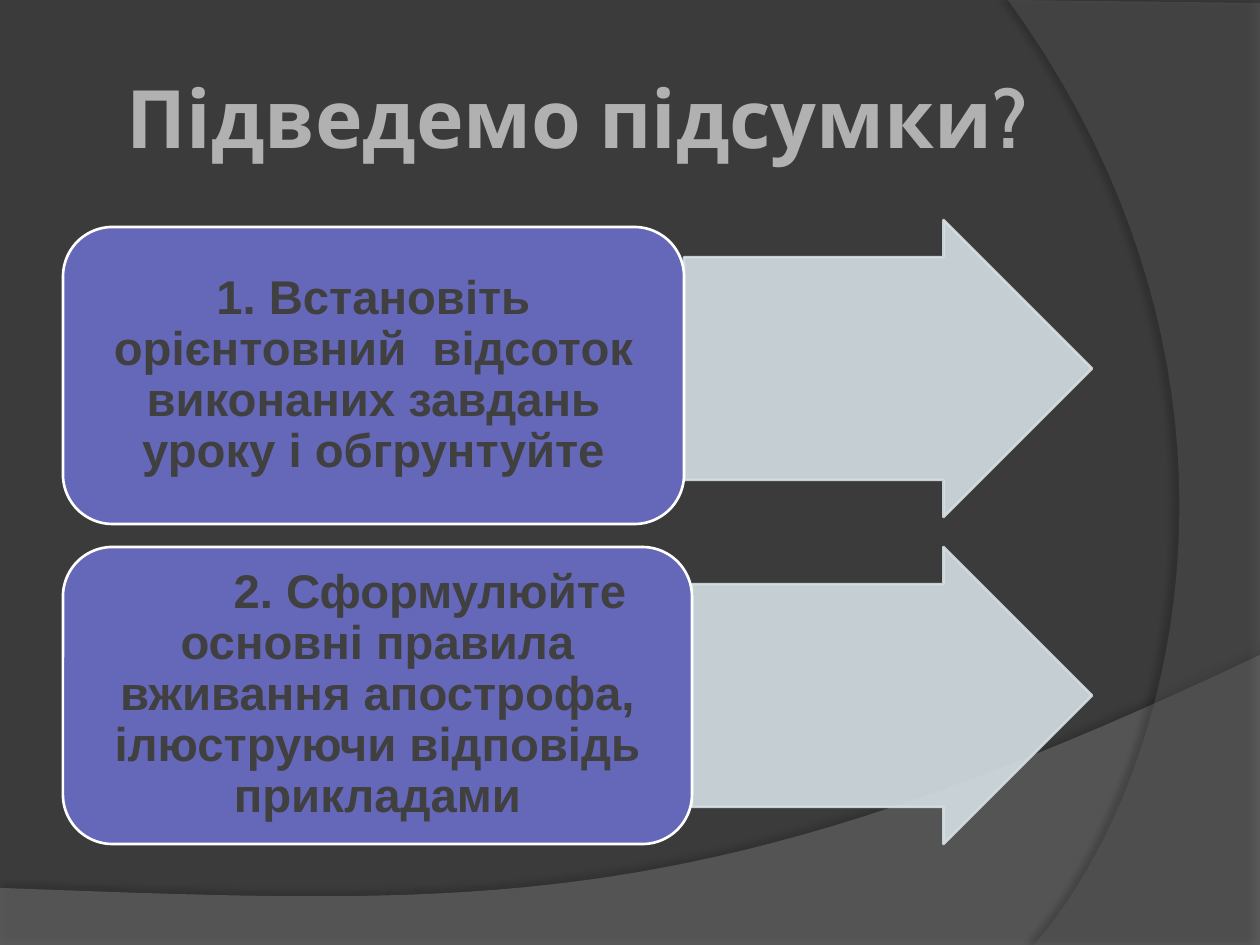
import pptx
import pptx.dml.color
import pptx.enum.shapes
import pptx.enum.text
import pptx.oxml
import pptx.oxml.ns
import pptx.util

RGBColor = pptx.dml.color.RGBColor
MSO_SHAPE = pptx.enum.shapes.MSO_SHAPE
PP_ALIGN = pptx.enum.text.PP_ALIGN
MSO_ANCHOR = pptx.enum.text.MSO_ANCHOR
qn = pptx.oxml.ns.qn

PX = 914400 / 126
CURVE_STEPS = 40
BACKGROUND = RGBColor(0x3B, 0x3B, 0x3B)
BOTTOM_WAVE = RGBColor(0x7F, 0x7F, 0x7F)
SIDE_WAVE = RGBColor(0x5E, 0x5E, 0x5E)
TITLE_GREY = RGBColor(0xB1, 0xB1, 0xB1)
ARROW = RGBColor(0xD5, 0xDF, 0xE4)
BOX = RGBColor(0x65, 0x67, 0xB9)
WHITE = RGBColor(0xFF, 0xFF, 0xFF)
TEXT = RGBColor(0x40, 0x40, 0x40)


def px(length):
    return pptx.util.Emu(round(length * PX))


def set_opacity(shape, percent):
    """Make every solid colour of the shape's fill and line translucent."""
    for color in shape._element.spPr.iter(qn("a:srgbClr")):
        alpha = color.makeelement(qn("a:alpha"), {"val": str(percent * 1000)})
        color.append(alpha)


presentation = pptx.Presentation()
presentation.slide_width = px(1260)
presentation.slide_height = px(945)
slide = presentation.slides.add_slide(presentation.slide_layouts[5])
slide.background.fill.solid()
slide.background.fill.fore_color.rgb = BACKGROUND

# Background waves: straight corners, then one cubic curve from the last corner.
# corners, curve (two controls and end), colour, opacity, shadow opacity, distance, angle
waves = [
    ([(0, 888), (0, 945), (1260, 945), (1260, 655)],
     [(704, 919), (493, 906), (0, 888)], BOTTOM_WAVE, 45, 35, 3.5, 270),
    ([(1260, 3), (1260, 945), (1034, 945)],
     [(1178, 780), (1283, 378), (1008, 0)], SIDE_WAVE, 40, 45, 4, 180),
]
for corners, curve, color, opacity, shadow_opacity, distance, angle in waves:
    points = list(corners)
    controls = [corners[-1]] + curve
    for step in range(1, CURVE_STEPS + 1):
        t = step / CURVE_STEPS
        weights = [(1 - t) ** 3, 3 * t * (1 - t) ** 2, 3 * t ** 2 * (1 - t), t ** 3]
        points.append(tuple(sum(weight * control[axis] for weight, control in zip(weights, controls))
                            for axis in (0, 1)))
    points = [(px(x), px(y)) for x, y in points]
    builder = slide.shapes.build_freeform(*points[0], scale=1)
    builder.add_line_segments(points[1:], close=True)
    wave = builder.convert_to_shape()
    wave.fill.solid()
    wave.fill.fore_color.rgb = color
    wave.line.fill.background()
    set_opacity(wave, opacity)
    wave._element.spPr.append(pptx.oxml.parse_xml(
        '<a:effectLst xmlns:a="http://schemas.openxmlformats.org/drawingml/2006/main">'
        f'<a:outerShdw blurRad="{pptx.util.Pt(4)}" dist="{pptx.util.Pt(distance)}" '
        f'dir="{angle * 60000}" algn="ctr" rotWithShape="0"><a:srgbClr val="000000">'
        f'<a:alpha val="{shadow_opacity * 1000}"/></a:srgbClr></a:outerShdw></a:effectLst>'))

title = slide.shapes.title
slide.shapes._spTree.append(title._element)  # in front of the waves
title.left, title.top, title.width, title.height = px(63), px(38), px(1029), px(157)
frame = title.text_frame
frame.word_wrap = True
frame.vertical_anchor = MSO_ANCHOR.MIDDLE
frame.margin_left = frame.margin_right = frame.margin_top = frame.margin_bottom = px(6)
paragraph = frame.paragraphs[0]
paragraph.alignment = PP_ALIGN.CENTER
run = paragraph.add_run()
run.text = "Підведемо підсумки?"
run.font.name = "Cabin"
run.font.size = pptx.util.Pt(46)
run.font.bold = True
run.font.color.rgb = TITLE_GREY

# Tasks: arrow top, box top, box width, first-line indent, text
ROW_HEIGHT = 297
BOX_LEFT = 63
ARROW_TIP = 1092
tasks = [
    (220, 227, 621, 0,
     "1. Встановіть орієнтовний  відсоток виконаних завдань уроку і обгрунтуйте"),
    (547, 547, 629, 105,
     "2. Сформулюйте основні правила вживання апострофа, ілюструючи відповідь прикладами"),
]
for arrow_top, box_top, box_width, indent, text in tasks:
    arrow_left = BOX_LEFT + box_width
    arrow = slide.shapes.add_shape(MSO_SHAPE.RIGHT_ARROW, px(arrow_left), px(arrow_top),
                                   px(ARROW_TIP - arrow_left), px(ROW_HEIGHT))
    arrow.adjustments[0] = 0.75
    arrow.adjustments[1] = 0.5
    box = slide.shapes.add_shape(MSO_SHAPE.ROUNDED_RECTANGLE, px(BOX_LEFT), px(box_top),
                                 px(box_width), px(ROW_HEIGHT))
    for shape, fill, line in ((arrow, ARROW, ARROW), (box, BOX, WHITE)):
        shape.shadow.inherit = False
        shape.fill.solid()
        shape.fill.fore_color.rgb = fill
        shape.line.color.rgb = line
        shape.line.width = pptx.util.Pt(1.5)
    set_opacity(arrow, 90)

    frame = box.text_frame
    frame.word_wrap = True
    frame.vertical_anchor = MSO_ANCHOR.MIDDLE
    frame.margin_left = frame.margin_right = px(14)
    frame.margin_top = frame.margin_bottom = px(7)
    paragraph = frame.paragraphs[0]
    paragraph.alignment = PP_ALIGN.CENTER
    paragraph.line_spacing = 0.9
    paragraph._p.get_or_add_pPr().set("indent", str(px(indent)))
    run = paragraph.add_run()
    run.text = text
    run.font.name = "Arial"
    run.font.size = pptx.util.Pt(27)
    run.font.bold = True
    run.font.color.rgb = TEXT

presentation.save("out.pptx")
